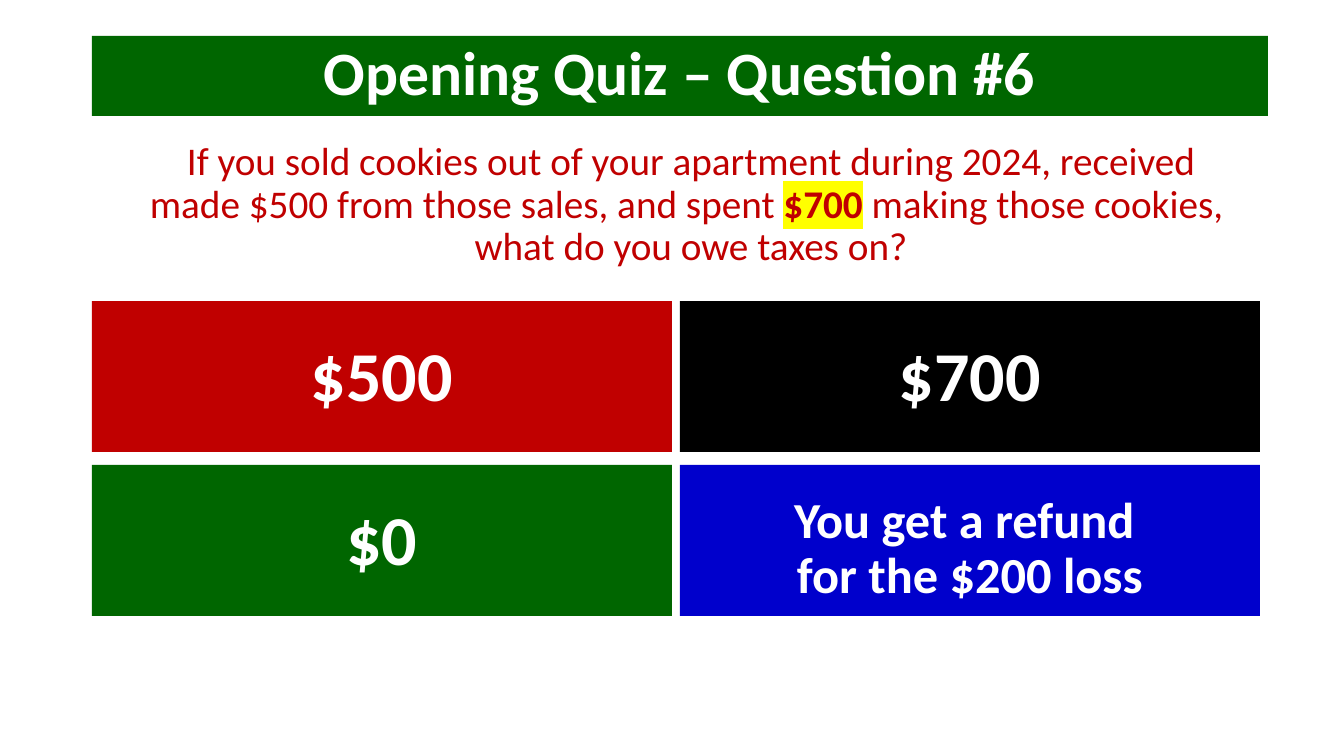
from lxml import etree
from pptx import Presentation
from pptx import util as u
from pptx.dml.color import RGBColor
from pptx.enum import shapes, text
from pptx.oxml.ns import qn

COLORS = {
    "green": "006600",
    "red": "C00000",
    "black": "000000",
    "blue": "0000CC",
    "white": "FFFFFF",
    "yellow": "FFFF00",
}
ANSWERS = [
    ("$500", "red", 50, 4),
    ("$700", "black", 50, 4),
    ("$0", "green", 50, 4),
    ("You get a refund \vfor the $200 loss", "blue", 36, 18),
]


class QuizSlide:
    """Quiz slide with a title bar, a question and answer tiles."""

    scale = 12192000 / 1344
    font_name = "Calibri"

    def __init__(self, presentation):
        presentation.slide_width = self.px(1344)
        presentation.slide_height = self.px(756)
        self.slide = presentation.slides.add_slide(presentation.slide_layouts[6])

    def px(self, length):
        return u.Emu(round(length * self.scale))

    def box(self, *lengths):
        return [self.px(length) for length in lengths]

    def style(self, paragraph, size, color, bold):
        paragraph.alignment = text.PP_ALIGN.CENTER
        paragraph.line_spacing = 0.9
        font = paragraph.font
        font.name, font.size, font.bold = self.font_name, u.Pt(size), bold
        font.color.rgb = RGBColor.from_string(COLORS[color])

    def tile(self, box, label, fill, size, top_inset=0):
        shape = self.slide.shapes.add_shape(
            shapes.MSO_SHAPE.RECTANGLE, *self.box(*box))
        shape.shadow.inherit = False
        shape.fill.solid()
        shape.fill.fore_color.rgb = RGBColor.from_string(COLORS[fill])
        shape.line.fill.background()
        frame = shape.text_frame
        frame.word_wrap = True
        frame.vertical_anchor = text.MSO_ANCHOR.MIDDLE
        frame.margin_top, frame.margin_bottom = self.px(top_inset), 0
        frame.text = label
        self.style(frame.paragraphs[0], size, "white", True)

    def question(self, box, before, amount, after):
        frame = self.slide.shapes.add_textbox(*self.box(*box)).text_frame
        frame.word_wrap = True
        paragraph = frame.paragraphs[0]
        for part in before:
            if paragraph.runs:
                paragraph.add_line_break()
            paragraph.add_run().text = part
        self.highlight(paragraph.add_run(), amount)
        for index, part in enumerate(after):
            if index:
                paragraph.add_line_break()
            paragraph.add_run().text = part
        self.style(paragraph, 28, "red", False)

    def highlight(self, run, words):
        run.text = words
        run.font.bold = True
        mark = etree.SubElement(run.font._element, qn("a:highlight"))
        etree.SubElement(mark, qn("a:srgbClr"), val=COLORS["yellow"])


def main():
    presentation = Presentation()
    quiz = QuizSlide(presentation)
    quiz.tile((92, 36, 1176, 80), "Opening Quiz – Question #6", "green", 44)
    quiz.question(
        (92, 137, 1198, 140),
        ["If you sold cookies out of your apartment during 2024, received",
         "made $500 from those sales, and spent "],
        "$700",
        [" making those cookies, ", "what do you owe taxes on?"],
    )
    for index, (label, fill, size, top_inset) in enumerate(ANSWERS):
        row, column = divmod(index, 2)
        box = (92 + 588 * column, 301 + 164 * row, 580, 151)
        quiz.tile(box, label, fill, size, top_inset)
    presentation.save("out.pptx")


if __name__ == "__main__":
    main()
